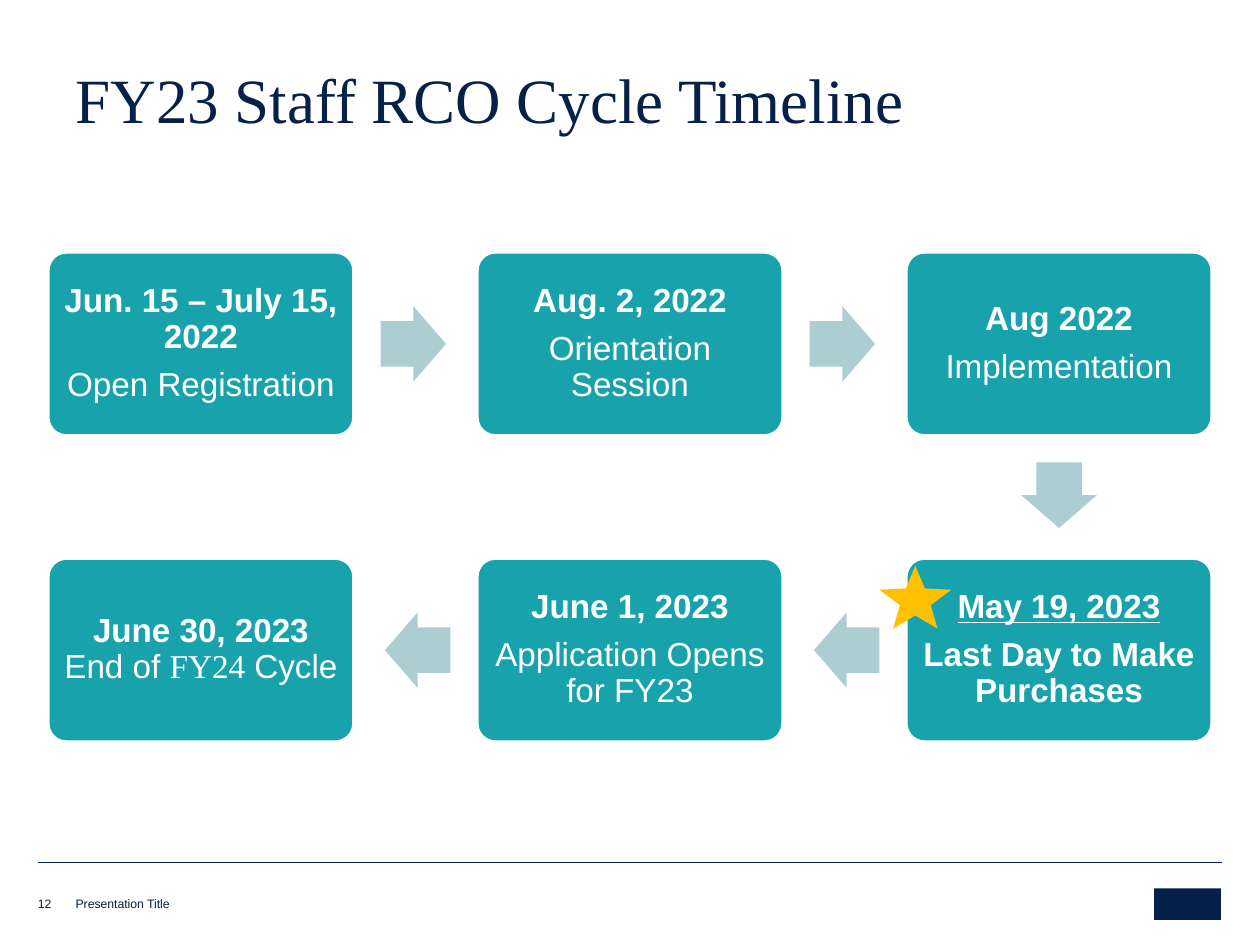
from dataclasses import dataclass
from math import atan2, degrees

from lxml import etree
from pptx import Presentation
from pptx.dml.color import RGBColor
from pptx.enum.shapes import MSO_CONNECTOR, MSO_SHAPE
from pptx.enum.text import MSO_ANCHOR, MSO_AUTO_SIZE, PP_ALIGN
from pptx.oxml.ns import qn
from pptx.util import Inches, Pt

STRAIGHT = MSO_CONNECTOR.STRAIGHT
RECTANGLE = MSO_SHAPE.RECTANGLE
ROUNDED = MSO_SHAPE.ROUNDED_RECTANGLE
ARROW = MSO_SHAPE.RIGHT_ARROW
STAR = MSO_SHAPE.STAR_5_POINT
MIDDLE, BOTTOM = MSO_ANCHOR.MIDDLE, MSO_ANCHOR.BOTTOM
CENTER, LEFT = PP_ALIGN.CENTER, PP_ALIGN.LEFT
TITLE_ONLY = 5


@dataclass(frozen=True)
class Theme:
    navy: str = "052049"
    teal: str = "18A3AC"
    pale_teal: str = "ACCED2"
    gold: str = "FFC000"
    white: str = "FFFFFF"
    sans: str = "Arial"
    serif: str = "Times New Roman"
    title_size: float = 36
    step_size: float = 19
    footer_size: float = 7


@dataclass(frozen=True)
class Grid:
    """Two rows of three cards, centred across the slide; inches."""
    slide_width: float = 10
    slide_height: float = 7.5
    margin: float = 0.38
    top: float = 2
    card_width: float = 2.43
    card_height: float = 1.46
    row_pitch: float = 2.43
    columns: int = 3

    def card(self, column, row):
        free = self.slide_width - 2 * self.margin - self.card_width
        pitch = free / (self.columns - 1)
        return (self.margin + column * pitch, self.top + row * self.row_pitch,
                self.card_width, self.card_height)


class TimelinePage:
    ARROW_LENGTH, ARROW_BREADTH = 0.52, 0.6
    ARROW_REACH = 0.47  # from the edge of a card to the centre of its arrow

    def __init__(self, deck, theme, grid):
        self.theme = theme
        self.grid = grid
        self.page = deck.slides.add_slide(deck.slide_layouts[TITLE_ONLY])

    def format_span(self, span, size, color, font=None, bold=False, underline=False):
        span.font.name = font or self.theme.sans
        span.font.size = Pt(size)
        span.font.color.rgb = RGBColor.from_string(color)
        span.font.bold = bold
        span.font.underline = underline

    def set_frame(self, box, anchor, horizontal, vertical):
        frame = box.text_frame
        frame.word_wrap = True
        frame.auto_size = MSO_AUTO_SIZE.NONE
        frame.vertical_anchor = anchor
        frame.margin_left = frame.margin_right = Inches(horizontal)
        frame.margin_top = frame.margin_bottom = Inches(vertical)
        return frame

    def title(self, text, area):
        box = self.page.shapes.title
        box.left, box.top, box.width, box.height = map(Inches, area)
        frame = self.set_frame(box, BOTTOM, 0.1, 0.05)
        frame.text = text
        para = frame.paragraphs[0]
        para.alignment = LEFT
        para.line_spacing = 0.85
        self.format_span(para.runs[0], self.theme.title_size,
                         self.theme.navy, self.theme.serif)

    def footer(self, text, area):
        box = self.page.shapes.add_textbox(*map(Inches, area))
        frame = self.set_frame(box, BOTTOM, 0, 0)
        frame.text = text
        self.format_span(frame.paragraphs[0].runs[0],
                         self.theme.footer_size, self.theme.navy)

    def rule(self, start, end, height):
        line = self.page.shapes.add_connector(
            STRAIGHT, *map(Inches, (start, height, end, height)))
        line.line.color.rgb = RGBColor.from_string(self.theme.navy)
        line.line.width = Pt(0.25)
        etree.SubElement(line._element.spPr, qn("a:effectLst"))

    def shape(self, kind, area, color, *adjustments):
        shape = self.page.shapes.add_shape(kind, *map(Inches, area))
        shape.shadow.inherit = False
        shape.fill.solid()
        shape.fill.fore_color.rgb = RGBColor.from_string(color)
        shape.line.fill.background()
        for index, value in enumerate(adjustments):
            shape.adjustments[index] = value
        return shape

    def card(self, cell, paragraphs):
        """Each paragraph is a list of (text, font options) spans."""
        box = self.shape(ROUNDED, self.grid.card(*cell), self.theme.teal, 0.1)
        box.line.color.rgb = RGBColor.from_string(self.theme.white)
        box.line.width = Pt(2)
        frame = self.set_frame(box, MIDDLE, 0.08, 0.08)
        for index, spans in enumerate(paragraphs):
            para = frame.add_paragraph() if index else frame.paragraphs[0]
            para.alignment = CENTER
            para.line_spacing = 0.9
            para.space_after = Pt(7 if len(paragraphs) > 1 else 0)
            for text, options in spans:
                span = para.add_run()
                span.text = text
                self.format_span(span, self.theme.step_size,
                                 self.theme.white, **options)

    def arrow(self, cell, next_cell):
        across, down = (after - before for before, after in zip(cell, next_cell))
        left, top, width, height = self.grid.card(*cell)
        center_x = left + width / 2 + across * (width / 2 + self.ARROW_REACH)
        center_y = top + height / 2 + down * (height / 2 + self.ARROW_REACH)
        area = (center_x - self.ARROW_LENGTH / 2, center_y - self.ARROW_BREADTH / 2,
                self.ARROW_LENGTH, self.ARROW_BREADTH)
        arrow = self.shape(ARROW, area, self.theme.pale_teal, 0.6, 0.5)
        arrow.rotation = degrees(atan2(down, across))


def main():
    theme, grid = Theme(), Grid()
    deck = Presentation()
    deck.slide_width = Inches(grid.slide_width)
    deck.slide_height = Inches(grid.slide_height)
    timeline = TimelinePage(deck, theme, grid)

    timeline.rule(0.3, 9.7, 6.84)
    timeline.shape(RECTANGLE, (9.16, 7.05, 0.53, 0.25), theme.navy)
    timeline.footer("Presentation Title", (0.6, 7.08, 4.71, 0.15))
    timeline.footer("12", (0.3, 7.06, 0.27, 0.17))
    timeline.title("FY23 Staff RCO Cycle Timeline", (0.5, 0.46, 8.94, 0.67))

    plain, bold = {}, {"bold": True}
    steps = [
        [[("Jun. 15 – July 15, 2022", bold)], [("Open Registration", plain)]],
        [[("Aug. 2, 2022", bold)], [("Orientation Session", plain)]],
        [[("Aug 2022", bold)], [("Implementation", plain)]],
        [[("May 19, 2023", {"bold": True, "underline": True})],
         [("Last Day to Make Purchases", bold)]],
        [[("June 1, 2023", bold)], [("Application Opens for FY23", plain)]],
        [[("June 30, 2023 ", bold), ("End of ", plain),
          ("FY24", {"font": theme.serif}), (" Cycle", plain)]],
    ]
    columns = range(grid.columns)
    cells = [(column, 0) for column in columns]
    cells += [(column, 1) for column in reversed(columns)]
    for cell, next_cell, paragraphs in zip(cells, cells[1:] + [None], steps):
        timeline.card(cell, paragraphs)
        if next_cell:
            timeline.arrow(cell, next_cell)
    timeline.shape(STAR, (6.98, 4.49, 0.57, 0.5), theme.gold, 0.215)

    deck.save("out.pptx")


if __name__ == "__main__":
    main()
